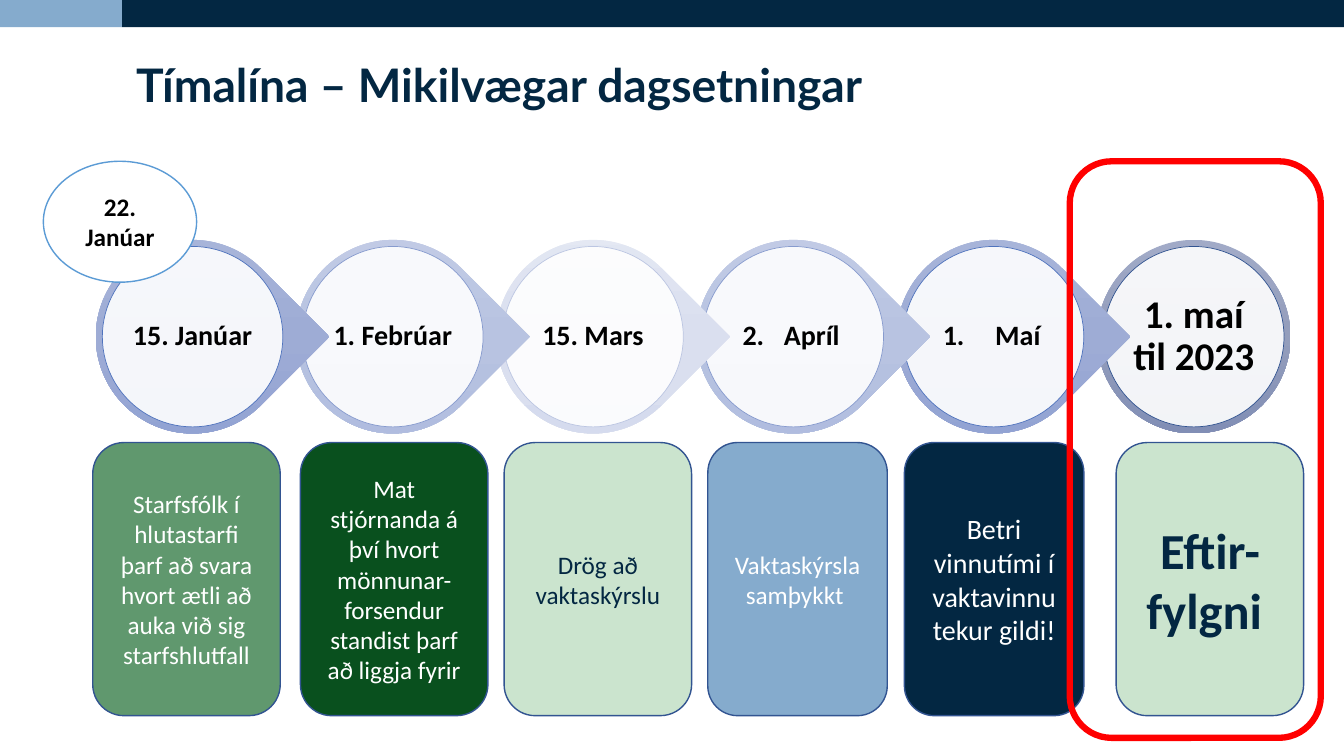
from copy import deepcopy

from lxml import etree
from pptx import Presentation
from pptx.dml.color import RGBColor
from pptx.enum.shapes import MSO_SHAPE as SHAPE
from pptx.enum.text import MSO_ANCHOR as ANCHOR, PP_ALIGN as ALIGN
from pptx.oxml.ns import qn
from pptx.util import Inches, Pt

COLORS = {
    "navy": "032742", "sky": "85ABCD", "white": "FFFFFF", "black": "000000",
    "green": "60986E", "forest": "09501E", "mint": "CBE4CE",
    "border": "325491", "bubble": "5B9BD5", "red": "FF0000",
    "ring_strong": "4F73BD", "ring_mid": "879BCE", "ring_pale": "BCC6E2",
}
GRADIENTS = {
    "strong": ("ACB8DB", "9EACD5", "8D9FD2"),
    "mid": ("C5CEE7", "B8C3E1", "ADBADE"),
    "pale": ("E6EAF4", "DADFEF", "D5DBEE"),
    "final": ("A1AAC7", "949EBC", "818EB5"),
}

# Date, gradient, ring colour, tab stop after the day number
DATES = [
    ("15. Janúar", "strong", "ring_strong", None),
    ("1. Febrúar ", "mid", "ring_mid", None),
    ("15. Mars", "pale", "ring_pale", None),
    ("2.\tApríl", "mid", "ring_mid", 0.41),
    ("1.\tMaí", "strong", "ring_strong", 0.52),
    ("1. maí til 2023", "final", "border", None),
]
FIRST_X, LAST_X, RING_Y, RING = 0.95, 10.88, 2.38, 1.92
PITCH = (LAST_X - FIRST_X) / (len(DATES) - 1)
DISC_GAP = 0.065
DISC = RING - 2 * DISC_GAP

# Left, width, fill, text, font size, font colour
STEPS = [
    (0.92, 1.86, "green", "Starfsfólk í hlutastarfi þarf að svara hvort ætli að "
     "auka við sig starfshlutfall", 18, "white"),
    (2.98, 1.86, "forest", "Mat stjórnanda á því hvort mönnunar-forsendur standist "
     "þarf að liggja fyrir", 18, "white"),
    (5, 1.86, "mint", "Drög að vaktaskýrslu", 18, "navy"),
    (7.02, 1.78, "sky", "Vaktaskýrsla samþykkt ", 18, "white"),
    (8.97, 1.78, "navy", "Betri vinnutími í vaktavinnu tekur gildi!", 20, "white"),
]
FINAL_STEP = (11.07, 1.86, "mint", "Eftir-fylgni ", 36, "navy")


def rgb(name):
    return RGBColor.from_string(COLORS[name])


def add_box(s, kind, x, y, w, h, fill=None, line=None, width=1):
    sp = s.shapes.add_shape(kind, Inches(x), Inches(y), Inches(w), Inches(h))
    sp.shadow.inherit = False
    if fill:
        sp.fill.solid()
        sp.fill.fore_color.rgb = rgb(fill)
    else:
        sp.fill.background()
    if line:
        sp.line.color.rgb = rgb(line)
        sp.line.width = Pt(width)
    else:
        sp.line.fill.background()
    return sp


def set_text(sp, text, size, color, bold=False, font="Calibri", align=ALIGN.CENTER):
    tf = sp.text_frame
    tf.word_wrap = True
    tf.vertical_anchor = ANCHOR.MIDDLE
    p = tf.paragraphs[0]
    p.text = text
    p.alignment = align
    p.font.name = font
    p.font.size = Pt(size)
    p.font.bold = bold
    p.font.color.rgb = rgb(color)
    return p


def set_gradient(sp, name):
    """Three stops running straight down, whatever the shape's rotation."""
    sp.fill.gradient()
    sp.fill.gradient_angle = 270
    grad = sp._element.spPr.find(qn("a:gradFill"))
    grad.set("rotWithShape", "0")
    stops = grad.find(qn("a:gsLst"))
    stops.insert(1, deepcopy(stops[0]))
    for i, (stop, color) in enumerate(zip(sp.fill.gradient_stops, GRADIENTS[name])):
        stop.position = i / 2
        stop.color.rgb = RGBColor.from_string(color)


def set_alpha(sp, percent):
    color = sp._element.spPr.find(qn("a:solidFill"))[0]
    etree.SubElement(color, qn("a:alpha")).set("val", str(percent * 1000))


def add_tab(p, stop):
    tabs = etree.Element(qn("a:tabLst"))
    etree.SubElement(tabs, qn("a:tab"), pos=str(Inches(stop)), algn="l")
    pPr = p._p.get_or_add_pPr()
    pPr.find(qn("a:defRPr")).addprevious(tabs)


def add_title(s, text):
    title = s.shapes.title
    title.left, title.top = Inches(1.25), Inches(0.57)
    title.width, title.height = Inches(10.83), Inches(0.86)
    p = set_text(title, text, 33, "navy", True, "Lato", ALIGN.LEFT)
    title.text_frame.vertical_anchor = ANCHOR.TOP
    p.line_spacing = 0.9


def add_date(s, index, text, gradient, ring_color, tab):
    x = FIRST_X + index * PITCH
    final = index == len(DATES) - 1
    ring = add_box(s, SHAPE.OVAL if final else SHAPE.TEAR, x, RING_Y, RING, RING)
    ring.rotation = 0 if final else 45
    set_gradient(ring, gradient)

    disc = add_box(s, SHAPE.OVAL, x + DISC_GAP, RING_Y + DISC_GAP, DISC, DISC,
                   "white", ring_color, 0.5)
    set_alpha(disc, 90)
    tf = disc.text_frame
    tf.margin_left = tf.margin_right = tf.margin_top = tf.margin_bottom = Inches(0.02)
    p = set_text(disc, text, 28 if final else 20, "black", True)
    p.line_spacing = 0.9
    if tab:
        p.alignment = ALIGN.LEFT
        tf.margin_left = Inches(0.13)
        add_tab(p, tab)


def add_step(s, x, width, fill, text, size, color, bold=False):
    sp = add_box(s, SHAPE.ROUNDED_RECTANGLE, x, 4.39, width, 2.71, fill, "border")
    set_text(sp, text, size, color, bold)


def main():
    prs = Presentation()
    prs.slide_width, prs.slide_height = Inches(13.33), Inches(7.5)
    s = prs.slides.add_slide(prs.slide_layouts[5])

    # Header band and title
    add_box(s, SHAPE.RECTANGLE, 1.21, 0, 12.12, 0.27, "navy")
    add_box(s, SHAPE.RECTANGLE, 0, 0, 1.21, 0.27, "sky")
    add_title(s, "Tímalína – Mikilvægar dagsetningar")

    # Timeline, last date first so that each arrow overlaps the next ring
    for index, date in reversed(list(enumerate(DATES))):
        add_date(s, index, *date)

    # Steps under the dates
    for step in STEPS:
        add_step(s, *step)

    # Extra date and highlighted follow-up
    bubble = add_box(s, SHAPE.OVAL, 0.43, 1.6, 1.52, 1.2, "white", "bubble")
    set_text(bubble, "22. Janúar", 18, "black", True)
    add_box(s, SHAPE.ROUNDED_RECTANGLE, 10.61, 1.6, 2.49, 5.72, line="red", width=4.5)
    add_step(s, *FINAL_STEP, bold=True)

    prs.save("out.pptx")


if __name__ == "__main__":
    main()
